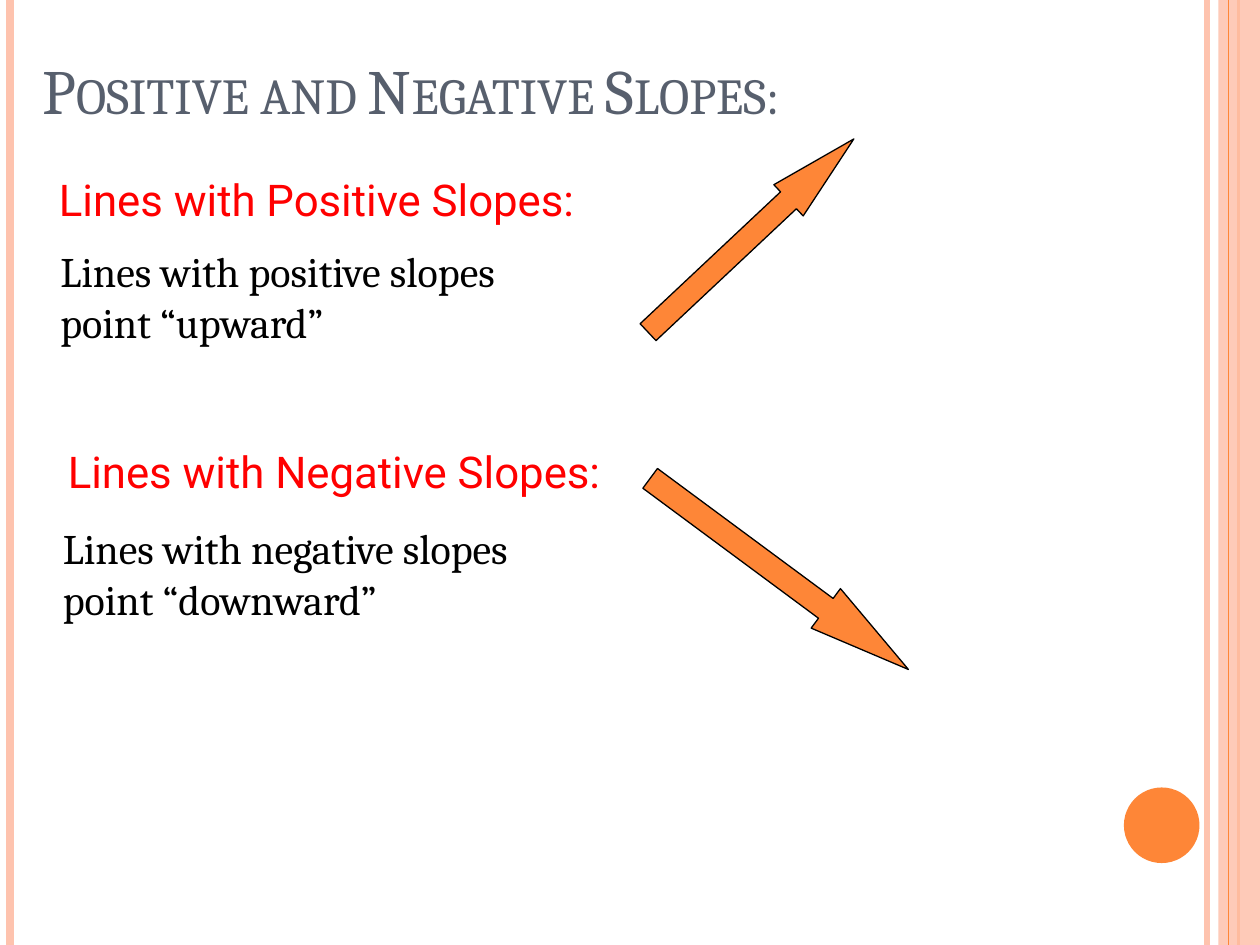
import pptx
import pptx.dml.color
import pptx.enum.shapes
import pptx.enum.text
import pptx.oxml
import pptx.oxml.ns
import pptx.util

Inches = pptx.util.Inches
Pt = pptx.util.Pt
RGB = pptx.dml.color.RGBColor.from_string
qn = pptx.oxml.ns.qn
SHAPES = pptx.enum.shapes.MSO_SHAPE
ANCHOR = pptx.enum.text.MSO_ANCHOR

COLORS = {
    "peach": "FEC3AE",
    "orange": "FE8637",
    "title": "575F6D",
    "heading": "FF0000",
    "black": "000000",
}

deck = pptx.Presentation()
deck.slide_width, deck.slide_height = Inches(10), Inches(7.5)
slide = deck.slides.add_slide(deck.slide_layouts[6])


def add_filled(preset, box, color):
    shape = slide.shapes.add_shape(preset, *map(Inches, box))
    shape.shadow.inherit = False
    shape.fill.solid()
    shape.fill.fore_color.rgb = RGB(COLORS[color])
    shape.line.fill.background()
    return shape


def add_text(text, box, font, size, color, anchor=ANCHOR.TOP):
    """Add a wrapped text box and return its paragraph."""
    frame = slide.shapes.add_textbox(*map(Inches, box)).text_frame
    frame.word_wrap = True
    frame.vertical_anchor = anchor
    paragraph = frame.paragraphs[0]
    paragraph.text = text
    paragraph.font.name = font
    paragraph.font.size = Pt(size)
    paragraph.font.color.rgb = RGB(COLORS[color])
    return paragraph


def_alpha = "a:alpha"

# Vertical stripes and the band along the right edge
stripes = [(9.58, "peach", 3), (0.08, "peach", 4.5), (9.83, "orange", 1.5), (9.75, "orange", 0.75)]
for x, color, width in stripes:
    if x == 9.75:
        band = add_filled(SHAPES.RECTANGLE, (9.67, 0, 0.33, 7.5), "peach")
        band_color = band.fill._xPr.find(qn("a:solidFill"))[0]
        band_color.append(pptx.oxml.parse_xml(
            '<a:alpha xmlns:a="http://schemas.openxmlformats.org/drawingml/2006/main" val="87000"/>'))
    stripe = slide.shapes.add_connector(
        pptx.enum.shapes.MSO_CONNECTOR.STRAIGHT, Inches(x), 0, Inches(x), Inches(7.5))
    stripe.line.color.rgb = RGB(COLORS[color])
    stripe.line.width = Pt(width)
    stripe._element.spPr.append(pptx.oxml.parse_xml(
        '<a:effectLst xmlns:a="http://schemas.openxmlformats.org/drawingml/2006/main"/>'))

add_filled(SHAPES.OVAL, (8.92, 6.25, 0.6, 0.6), "orange")

title = add_text("Positive and Negative Slopes:", (0.24, 0.26, 9, 0.8),
                 "Cambria", 36, "title", ANCHOR.BOTTOM)
title._p.pPr.find(qn("a:defRPr")).set("cap", "small")

headings = [
    ("Lines with Positive Slopes:", (0.37, 1.32, 4.34, 0.52)),
    ("Lines with Negative Slopes:", (0.44, 3.48, 4.77, 0.52)),
]
for heading, box in headings:
    add_text(heading, box, "Roboto", 25, "heading")

slope_arrows = [
    ((4.84, 1.7, 2.24, 0.34), 316.8, 0.54),
    ((4.91, 4.36, 2.55, 0.39), 36.5, 0.5),
]
for box, rotation, shaft in slope_arrows:
    arrow = add_filled(SHAPES.RIGHT_ARROW, box, "orange")
    arrow.rotation = rotation
    arrow.adjustments[0] = shaft
    arrow.adjustments[1] = 2.09
    arrow.line.color.rgb = RGB(COLORS["black"])
    arrow.line.width = Pt(0.75)

explanations = [
    ("Lines with positive slopes point “upward”", (0.38, 1.9, 3.69, 0.91)),
    ("Lines with negative slopes \vpoint “downward”", (0.4, 4.1, 4.46, 0.91)),
]
for explanation, box in explanations:
    add_text(explanation, box, "Cambria", 24, "black")

deck.save("out.pptx")
